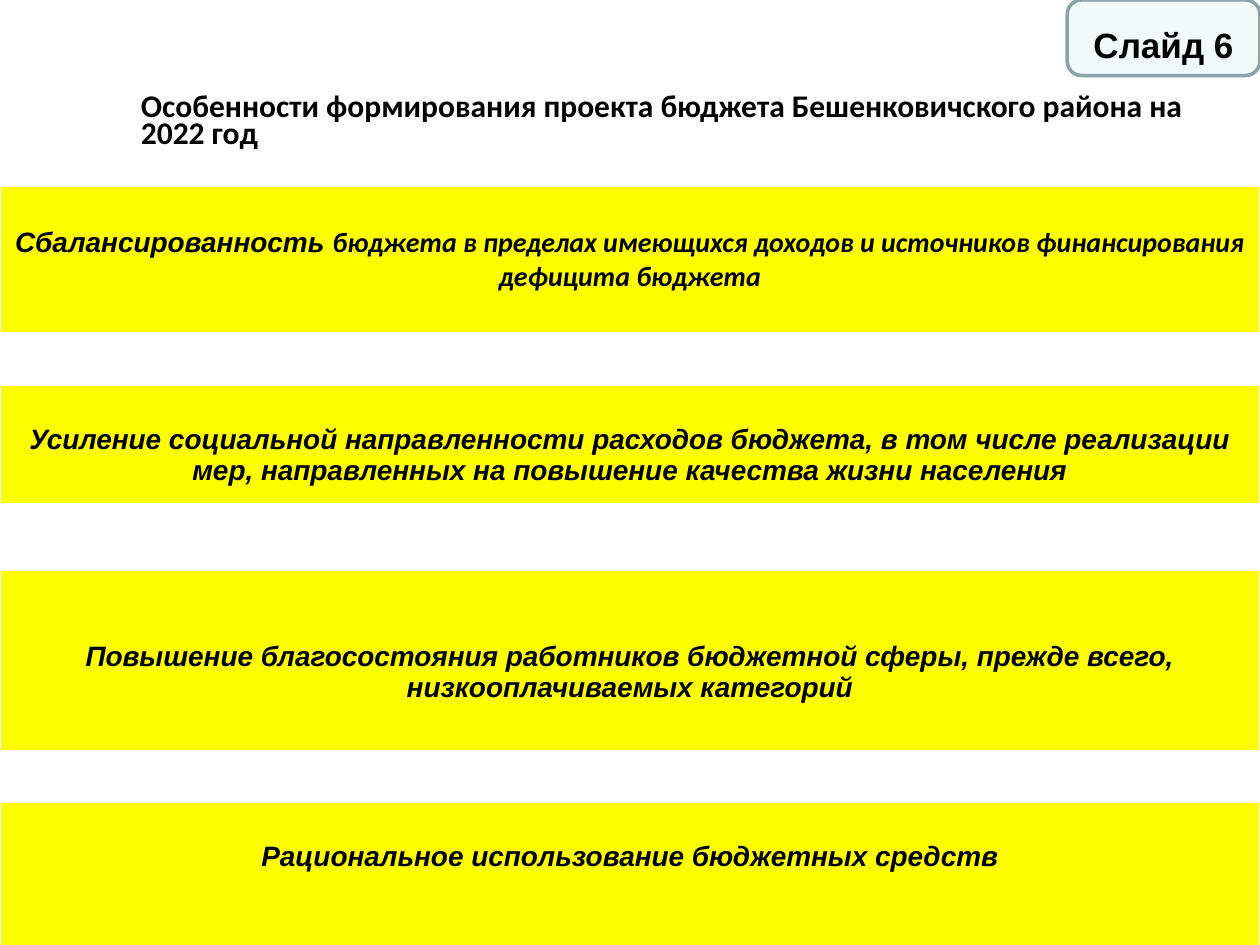
import pptx
import pptx.util
import pptx.dml.color
import pptx.enum.shapes
import pptx.enum.text
import pptx.oxml.ns
from lxml import etree
from pptx.util import Inches, Pt

RGBColor = pptx.dml.color.RGBColor
BLACK = RGBColor(0, 0, 0)
WHITE = RGBColor(0xFF, 0xFF, 0xFF)
YELLOW = RGBColor(0xFF, 0xFF, 0)
PALE_TEAL = RGBColor(0xF1, 0xF9, 0xF9)
GREY_TEAL = RGBColor(0x89, 0xA4, 0xA7)

CENTER = pptx.enum.text.PP_ALIGN.CENTER
LEFT = pptx.enum.text.PP_ALIGN.LEFT

TITLE = "Особенности формирования проекта бюджета Бешенковичского района на 2022 год"

# Each band: height, top margin, and (text, font) spans
BANDS = [
    (1.17, 0.31, [
        ("Сбалансированность ", "Arial"),
        ("бюджета в пределах имеющихся доходов и источников финансирования "
         "дефицита бюджета", "Calibri")]),
    (0.94, 0.31, [
        ("Усиление социальной направленности расходов бюджета, в том числе реализации "
         "мер, направленных на повышение качества жизни населения", "Arial")]),
    (1.43, 0.56, [
        ("Повышение благосостояния работников бюджетной сферы, прежде всего, "
         "низкооплачиваемых категорий", "Arial")]),
    (1.19, 0.31, [("Рациональное использование бюджетных средств", "Arial")]),
]
GAPS = [0.41, 0.53, 0.41]


def style_paragraph(para, size, alignment, font_name=None, italic=None):
    para.alignment = alignment
    para.font.size = Pt(size)
    para.font.bold = True
    para.font.italic = italic
    para.font.color.rgb = BLACK
    if font_name:
        para.font.name = font_name


def add_title(page, left, top, width, height):
    box = page.shapes.add_textbox(left, top, width, height)
    frame = box.text_frame
    frame.word_wrap = True
    para = frame.paragraphs[0]
    para.text = TITLE
    para.line_spacing = Pt(15.5)
    style_paragraph(para, 18, LEFT, "Calibri")


def add_badge(page, left, top, width, height):
    badge = page.shapes.add_shape(
        pptx.enum.shapes.MSO_SHAPE.ROUNDED_RECTANGLE, left, top, width, height)
    badge.adjustments[0] = 0.19
    badge.shadow.inherit = False
    badge.fill.solid()
    badge.fill.fore_color.rgb = PALE_TEAL
    badge.line.color.rgb = GREY_TEAL
    badge.line.width = Pt(2)
    frame = badge.text_frame
    frame.vertical_anchor = pptx.enum.text.MSO_ANCHOR.MIDDLE
    frame.margin_top, frame.margin_bottom = Inches(0.11), 0
    para = frame.paragraphs[0]
    para.text = "Слайд 6"
    style_paragraph(para, 20, CENTER, "Arial")


def set_borders(cell, bottom_width):
    """Draw white cell borders, 1 pt except at the bottom."""
    properties = cell._tc.get_or_add_tcPr()
    widths = {"a:lnL": 1, "a:lnR": 1, "a:lnT": 1, "a:lnB": bottom_width}
    for position, (tag, width) in enumerate(widths.items()):
        line = etree.Element(pptx.oxml.ns.qn(tag), w=str(Pt(width)))
        fill = etree.SubElement(line, pptx.oxml.ns.qn("a:solidFill"))
        etree.SubElement(fill, pptx.oxml.ns.qn("a:srgbClr"), val=str(WHITE))
        properties.insert(position, line)


def fill_band(cell, top_margin, spans):
    cell.margin_top = Inches(top_margin)
    para = cell.text_frame.paragraphs[0]
    style_paragraph(para, 16, CENTER, italic=True)
    for text, font_name in spans:
        span = para.add_run()
        span.text = text
        span.font.name = font_name


def add_bands(page, left, top, width):
    """Place the yellow bands in odd table rows, with white gap rows between."""
    heights = [band[0] for band in BANDS]
    row_heights = heights + GAPS
    row_heights[::2], row_heights[1::2] = heights, GAPS
    frame = page.shapes.add_table(
        len(row_heights), 2, left, top, width, Inches(sum(row_heights)))
    table = frame.table
    for index, height in enumerate(row_heights):
        table.rows[index].height = Inches(height)
        is_band = index % 2 == 0
        for column in range(2):
            cell = table.cell(index, column)
            cell.fill.solid()
            cell.fill.fore_color.rgb = YELLOW if is_band else WHITE
            set_borders(cell, 3 if index == 0 else 1)
        if index != 1:
            table.cell(index, 0).merge(table.cell(index, 1))
        if is_band:
            fill_band(table.cell(index, 0), *BANDS[index // 2][1:])


def main():
    deck = pptx.Presentation()
    deck.slide_width, deck.slide_height = Inches(10), Inches(7.5)
    page = deck.slides.add_slide(deck.slide_layouts[6])
    add_title(page, Inches(1.02), Inches(0.72), Inches(8.5), Inches(0.78))
    add_bands(page, Inches(0), Inches(1.48), Inches(10))
    add_badge(page, Inches(8.47), Inches(0), Inches(1.53), Inches(0.6))
    deck.save("out.pptx")


if __name__ == "__main__":
    main()
